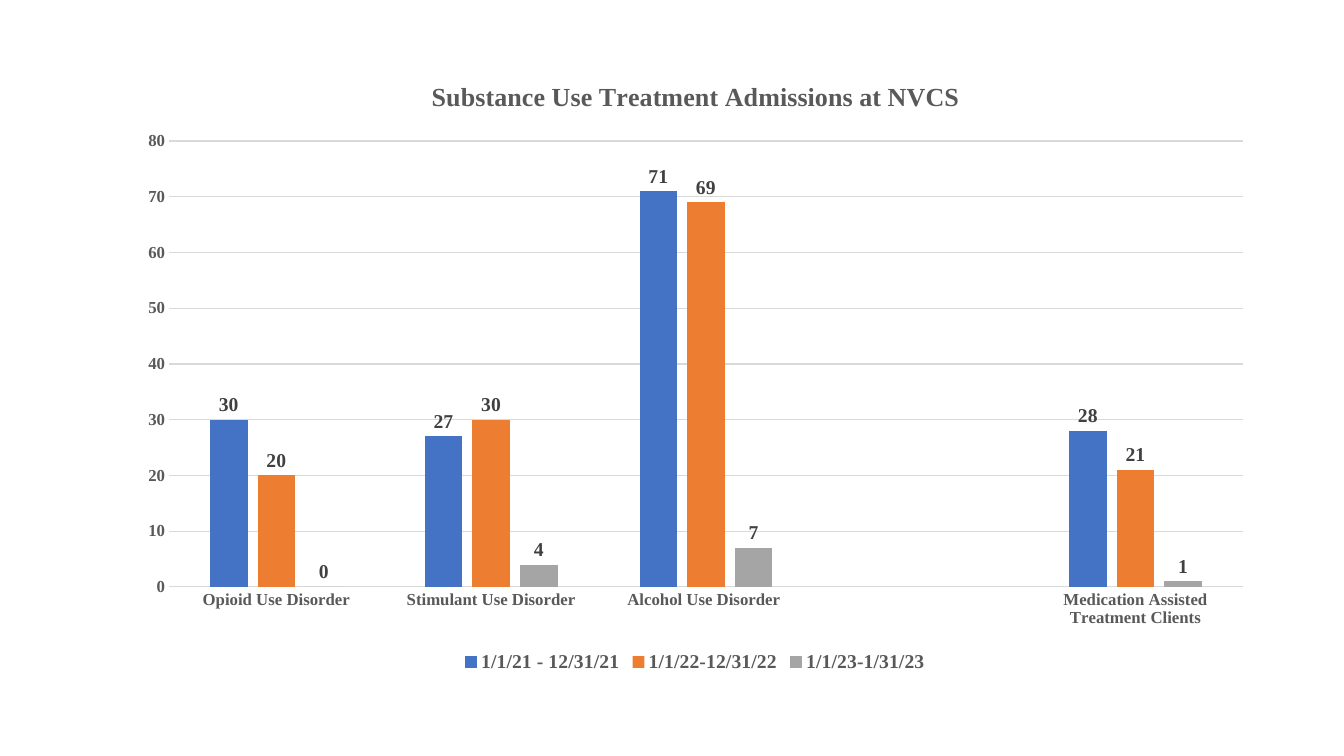
import pptx
import pptx.chart.data
import pptx.dml.color
import pptx.enum.chart
import pptx.oxml
import pptx.oxml.ns
import pptx.util

PX = 9525 * 96 / 100.8
FONT = "Times New Roman"
COLORS = {
    "blue": "4472C4",
    "orange": "ED7D31",
    "gray": "A5A5A5",
    "grid": "D9D9D9",
    "text": "595959",
    "label": "404040",
}
CHART_LEFT, CHART_TOP, CHART_WIDTH, CHART_HEIGHT = 125, 58, 1140, 619


def style_font(font, size, color):
    font.name = FONT
    font.size = pptx.util.Pt(size)
    font.bold = True
    font.color.rgb = pptx.dml.color.RGBColor.from_string(COLORS[color])


def place(element, index, target, left, top, width=None, height=None):
    for old_layout in element.findall(pptx.oxml.ns.qn("c:layout")):
        element.remove(old_layout)
    values = [
        ("x", (left - CHART_LEFT) / CHART_WIDTH),
        ("y", (top - CHART_TOP) / CHART_HEIGHT),
    ]
    if width:
        values += [("w", width / CHART_WIDTH), ("h", height / CHART_HEIGHT)]
    settings = f'<c:layoutTarget val="{target}"/>' if target else ""
    settings += '<c:xMode val="edge"/><c:yMode val="edge"/>'
    settings += "".join(f'<c:{name} val="{value:.4f}"/>' for name, value in values)
    namespace = pptx.oxml.ns.nsdecls("c")
    layout = pptx.oxml.parse_xml(
        f"<c:layout {namespace}><c:manualLayout>{settings}</c:manualLayout></c:layout>"
    )
    element.insert(index, layout)


presentation = pptx.Presentation()
presentation.slide_width = pptx.util.Emu(round(1344 * PX))
presentation.slide_height = pptx.util.Emu(round(756 * PX))
slide = presentation.slides.add_slide(presentation.slide_layouts[6])

admissions = [
    ("1/1/21 - 12/31/21", (30, 27, 71, None, 28), "blue"),
    ("1/1/22-12/31/22", (20, 30, 69, None, 21), "orange"),
    ("1/1/23-1/31/23", (0, 4, 7, None, 1), "gray"),
]
chart_data = pptx.chart.data.CategoryChartData()
chart_data.categories = [
    "Opioid Use Disorder",
    "Stimulant Use Disorder",
    "Alcohol Use Disorder ",
    "",
    "Medication Assisted Treatment Clients",
]
for period, counts, color in admissions:
    chart_data.add_series(period, counts)

frame = [
    pptx.util.Emu(round(length * PX))
    for length in (CHART_LEFT, CHART_TOP, CHART_WIDTH, CHART_HEIGHT)
]
chart = slide.shapes.add_chart(
    pptx.enum.chart.XL_CHART_TYPE.COLUMN_CLUSTERED, *frame, chart_data
).chart
chart.font.name = "Calibri"
chart.font.size = pptx.util.Pt(10)

chart.has_title = True
title = chart.chart_title
title.include_in_layout = False
title.text_frame.text = "Substance Use Treatment Admissions at NVCS"
style_font(title.text_frame.paragraphs[0].runs[0].font, 18.6, "text")
place(title._element, 1, None, 427, 76)

chart.has_legend = True
chart.legend.position = pptx.enum.chart.XL_LEGEND_POSITION.BOTTOM
chart.legend.include_in_layout = False
style_font(chart.legend.font, 14, "text")

grid_color = pptx.dml.color.RGBColor.from_string(COLORS["grid"])
value_axis = chart.value_axis
value_axis.minimum_scale = 0
value_axis.maximum_scale = 80
value_axis.major_unit = 10
value_axis.has_major_gridlines = True
value_axis.format.line.fill.background()
for axis in (chart.category_axis, value_axis):
    axis.major_tick_mark = pptx.enum.chart.XL_TICK_MARK.NONE
    axis.minor_tick_mark = pptx.enum.chart.XL_TICK_MARK.NONE
    style_font(axis.tick_labels.font, 12, "text")
for line in (chart.category_axis.format.line, value_axis.major_gridlines.format.line):
    line.color.rgb = grid_color
    line.width = pptx.util.Pt(0.75)

plot = chart.plots[0]
plot.gap_width = 219
plot.overlap = -27
plot.vary_by_categories = False
for series, (period, counts, color) in zip(plot.series, admissions):
    series.format.fill.solid()
    series.format.fill.fore_color.rgb = pptx.dml.color.RGBColor.from_string(COLORS[color])
    series.invert_if_negative = False
    labels = series.data_labels
    labels.show_value = True
    labels.position = pptx.enum.chart.XL_LABEL_POSITION.OUTSIDE_END
    style_font(labels.font, 14, "label")

plot_area = chart._chartSpace.chart.plotArea
place(plot_area, 0, "inner", 169, 141, 1074, 446)

presentation.save("out.pptx")
